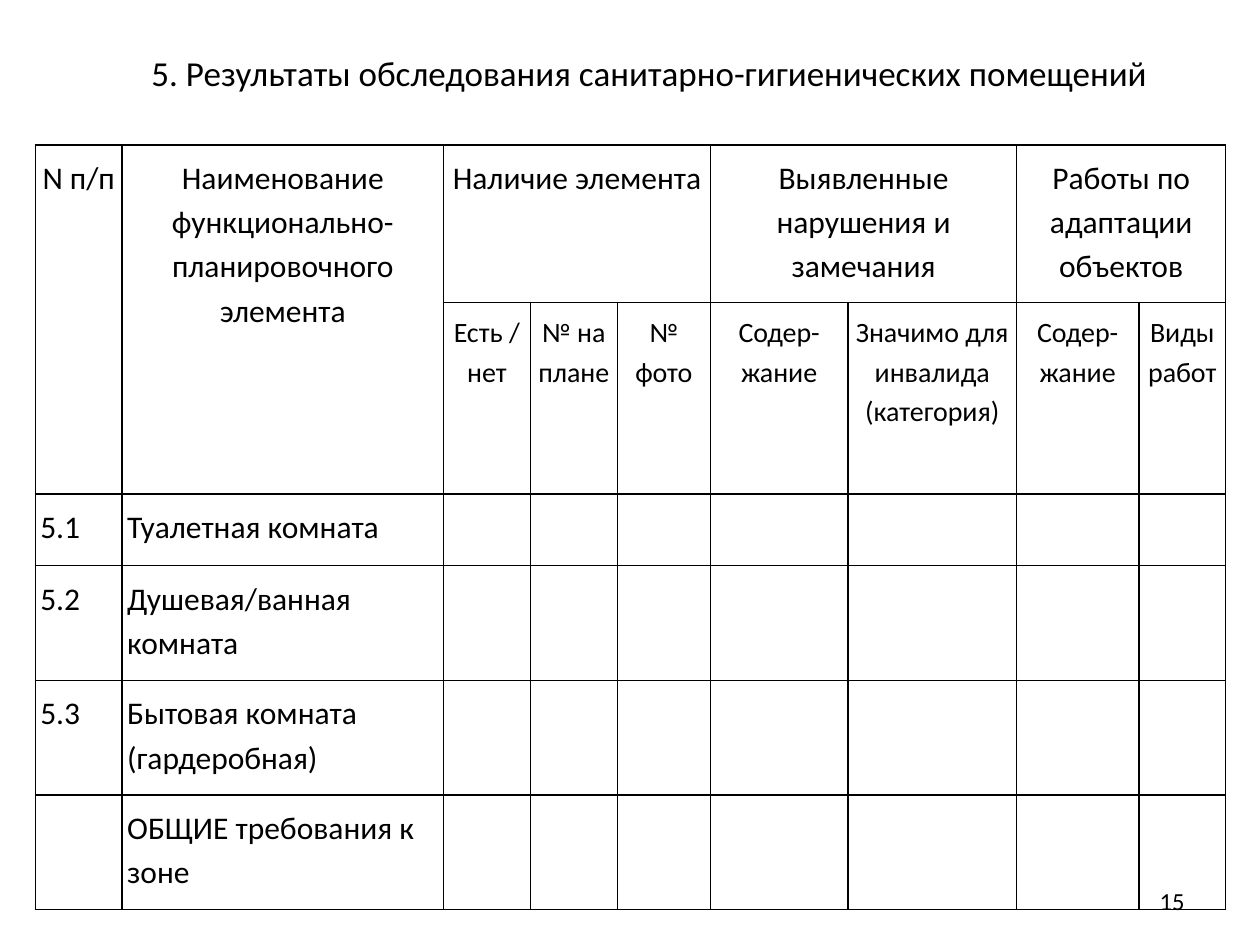
import dataclasses

import lxml.etree
import pptx
import pptx.dml.color
import pptx.enum.text
import pptx.oxml.ns
import pptx.util

Inches = pptx.util.Inches
Pt = pptx.util.Pt
Align = pptx.enum.text.PP_ALIGN
Anchor = pptx.enum.text.MSO_ANCHOR

BLACK = pptx.dml.color.RGBColor(0, 0, 0)
FONT = "Calibri"


@dataclasses.dataclass
class Label:
    text: str
    left: float
    top: float
    width: float
    height: float
    size: int
    align: Align
    anchor: Anchor = Anchor.TOP


@dataclasses.dataclass
class Entry:
    row: int
    col: int
    text: str
    size: int = 18
    align: Align = Align.CENTER
    rows: int = 1
    cols: int = 1


WIDTHS = [0.69, 2.55, 0.69, 0.69, 0.74, 1.09, 1.34, 0.97, 0.69]
HEIGHTS = [1.25, 1.52, 0.57, 0.91, 0.91, 0.91]

HEADS = [
    Entry(0, 0, "N п/п", rows=2),
    Entry(0, 1, "Наименование функционально-планировочного элемента", rows=2),
    Entry(0, 2, "Наличие элемента", cols=3),
    Entry(0, 5, "Выявленные нарушения и замечания", cols=2),
    Entry(0, 7, "Работы по адаптации объектов", cols=2),
]
SUBS = ["Есть / нет", "№ на плане", "№ фото", "Содер-жание",
        "Значимо для инвалида (категория)", "Содер-жание", "Виды работ"]
ROOMS = [
    ("5.1", "Туалетная комната"),
    ("5.2", "Душевая/ванная комната"),
    ("5.3", "Бытовая комната (гардеробная)"),
    ("", "ОБЩИЕ требования к зоне"),
]


def write(frame, text: str, size: int, align: Align) -> None:
    para = frame.paragraphs[0]
    para.text = text
    para.alignment = align
    for run in para.runs:
        run.font.name = FONT
        run.font.size = Pt(size)
        run.font.color.rgb = BLACK


def add_label(slide, item: Label) -> None:
    box = slide.shapes.add_textbox(Inches(item.left), Inches(item.top),
                                   Inches(item.width), Inches(item.height))
    frame = box.text_frame
    frame.word_wrap = True
    frame.vertical_anchor = item.anchor
    write(frame, item.text, item.size, item.align)


def style(cell) -> None:
    """Set margins, thin black borders and no fill."""
    cell.margin_left = cell.margin_right = Inches(0.04)
    cell.margin_top = cell.margin_bottom = Inches(0.07)
    props = cell._tc.get_or_add_tcPr()
    qn = pptx.oxml.ns.qn
    for side in ("a:lnL", "a:lnR", "a:lnT", "a:lnB"):
        line = lxml.etree.SubElement(props, qn(side), w=str(Pt(1)))
        fill = lxml.etree.SubElement(line, qn("a:solidFill"))
        lxml.etree.SubElement(fill, qn("a:srgbClr"), val=str(BLACK))
    cell.fill.background()


def add_grid(slide, items: list[Entry]) -> None:
    frame = slide.shapes.add_table(
        len(HEIGHTS), len(WIDTHS), Inches(0.28), Inches(1.15),
        Inches(sum(WIDTHS)), Inches(sum(HEIGHTS)))
    table = frame.table
    table.first_row = False
    table.horz_banding = False
    for col, width in zip(table.columns, WIDTHS):
        col.width = Inches(width)
    for row, height in zip(table.rows, HEIGHTS):
        row.height = Inches(height)
    for cell in table.iter_cells():
        style(cell)
    for item in items:
        cell = table.cell(item.row, item.col)
        if item.rows > 1 or item.cols > 1:
            cell.merge(table.cell(item.row + item.rows - 1,
                                  item.col + item.cols - 1))
        write(cell.text_frame, item.text, item.size, item.align)
        cell.text_frame.paragraphs[0].line_spacing = 1.15


def main() -> None:
    deck = pptx.Presentation()
    deck.slide_width = Inches(10)
    deck.slide_height = Inches(7.5)
    slide = deck.slides.add_slide(deck.slide_layouts[6])

    # Title
    add_label(slide, Label(
        "5. Результаты обследования санитарно-гигиенических помещений",
        0.43, 0.36, 9.45, 0.44, 20, Align.CENTER))

    # Survey table
    items = list(HEADS)
    items += [Entry(1, col, text, 16) for col, text in enumerate(SUBS, 2)]
    for row, (num, name) in enumerate(ROOMS, 2):
        if num:
            items.append(Entry(row, 0, num, align=Align.JUSTIFY))
        items.append(Entry(row, 1, name, align=Align.LEFT))
    add_grid(slide, items)

    # Page number
    add_label(slide, Label("15", 7.17, 6.95, 2.33, 0.4, 14,
                           Align.RIGHT, Anchor.MIDDLE))

    deck.save("out.pptx")


if __name__ == "__main__":
    main()
